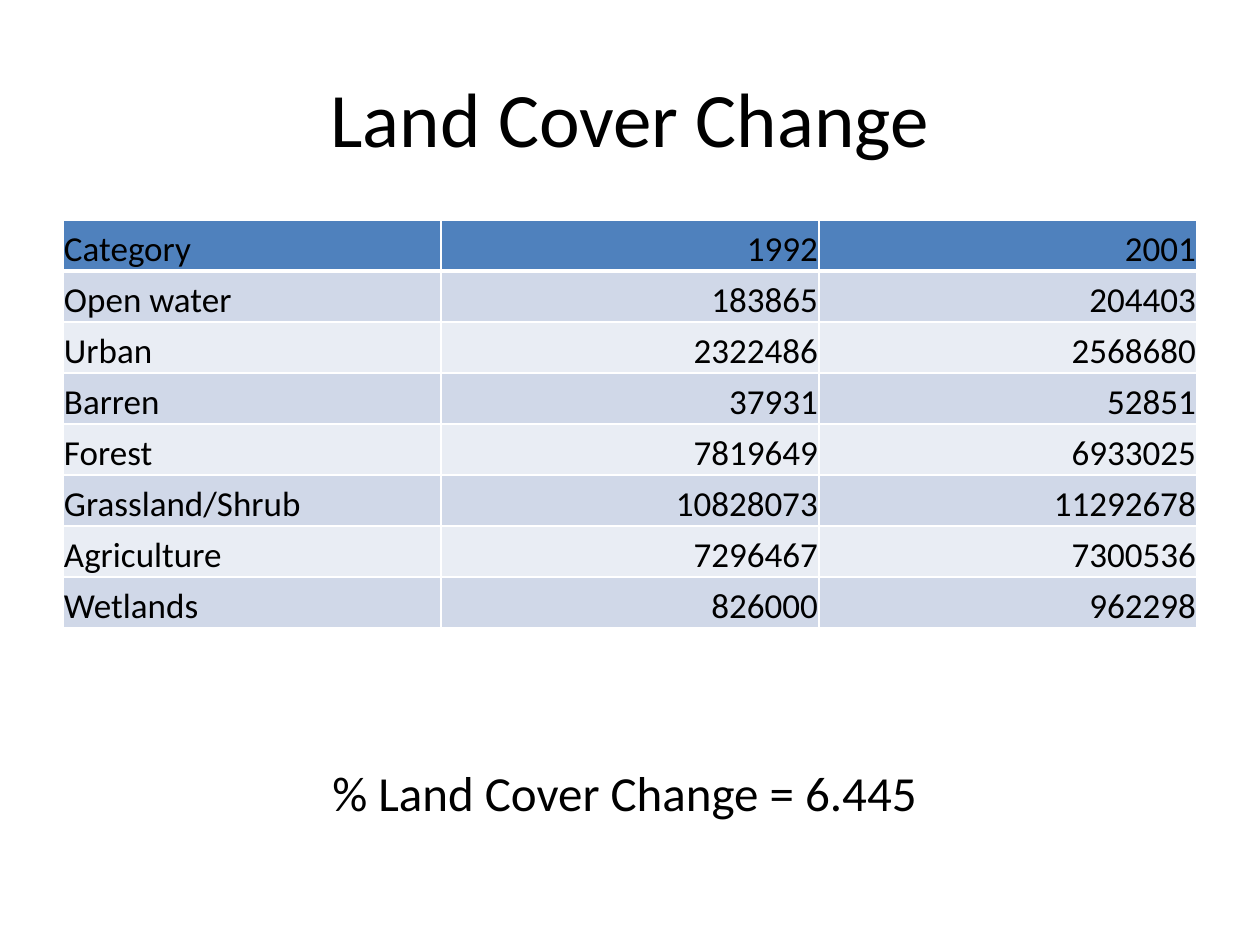
from lxml.etree import SubElement
from pptx import Presentation
from pptx.dml.color import RGBColor
from pptx.enum.text import MSO_ANCHOR as Anchor, PP_ALIGN as Align
from pptx.oxml.ns import qn
from pptx.util import Emu, Pt

PX_PER_INCH = 126
BLACK = RGBColor(0x00, 0x00, 0x00)
WHITE = RGBColor(0xFF, 0xFF, 0xFF)
HEADER_BLUE = RGBColor(0x4F, 0x81, 0xBD)
BAND_DARK = RGBColor(0xD0, 0xD8, 0xE8)
BAND_LIGHT = RGBColor(0xE9, 0xED, 0xF4)

LAND_COVER = [
    ("Category", "1992", "2001"),
    ("Open water", "183865", "204403"),
    ("Urban", "2322486", "2568680"),
    ("Barren", "37931", "52851"),
    ("Forest", "7819649", "6933025"),
    ("Grassland/Shrub", "10828073", "11292678"),
    ("Agriculture", "7296467", "7300536"),
    ("Wetlands", "826000", "962298"),
]


def px(length):
    return Emu(round(length * 914400 / PX_PER_INCH))


class SlideBuilder:
    font = "Calibri"

    def __init__(self, slide):
        self.slide = slide

    def set_text(self, frame, text, size, align):
        frame.text = text
        paragraph = frame.paragraphs[0]
        paragraph.alignment = align
        for run in paragraph.runs:
            run.font.name = self.font
            run.font.size = Pt(size)
            run.font.bold = False
            run.font.color.rgb = BLACK

    def title(self, text, left, top, width, height):
        heading = self.slide.shapes.title
        heading.left, heading.top = px(left), px(top)
        heading.width, heading.height = px(width), px(height)
        heading.text_frame.vertical_anchor = Anchor.MIDDLE
        self.set_text(heading.text_frame, text, 44, Align.CENTER)

    def note(self, text, left, top, width, height):
        box = self.slide.shapes.add_textbox(px(left), px(top), px(width), px(height))
        box.text_frame.word_wrap = True
        self.set_text(box.text_frame, text, 28, Align.CENTER)

    def border(self, cell, side, points):
        line = SubElement(cell._tc.get_or_add_tcPr(), qn(f"a:ln{side}"), w=str(Pt(points)))
        fill = SubElement(line, qn("a:solidFill"))
        SubElement(fill, qn("a:srgbClr"), val=str(WHITE))

    def table(self, rows, left, top, column_width, row_height):
        columns = len(rows[0])
        grid = self.slide.shapes.add_table(
            len(rows), columns, px(left), px(top),
            px(column_width * columns), px(row_height * len(rows))).table
        for column in grid.columns:
            column.width = px(column_width)
        for r, values in enumerate(rows):
            grid.rows[r].height = px(row_height)
            band = HEADER_BLUE if r == 0 else BAND_DARK if r % 2 else BAND_LIGHT
            for c, value in enumerate(values):
                cell = grid.cell(r, c)
                cell.margin_left = cell.margin_right = cell.margin_top = px(1)
                cell.margin_bottom = 0
                cell.vertical_anchor = Anchor.BOTTOM
                self.set_text(cell.text_frame, value, 20, Align.RIGHT if c else Align.LEFT)
                # A thick rule parts the header from the body
                for side in "LRTB":
                    self.border(cell, side, 3 if (r, side) in ((0, "B"), (1, "T")) else 1)
                cell.fill.solid()
                cell.fill.fore_color.rgb = band


def main():
    deck = Presentation()
    deck.slide_width, deck.slide_height = px(1260), px(945)
    builder = SlideBuilder(deck.slides.add_slide(deck.slide_layouts[5]))

    # Heading
    builder.title("Land Cover Change", 63, 38, 1134, 157)
    # Area by category and year
    builder.table(LAND_COVER, 63, 220, 378, 51)
    # Overall result
    builder.note("% Land Cover Change = 6.445", 147, 756, 955, 72)

    deck.save("out.pptx")


if __name__ == "__main__":
    main()
